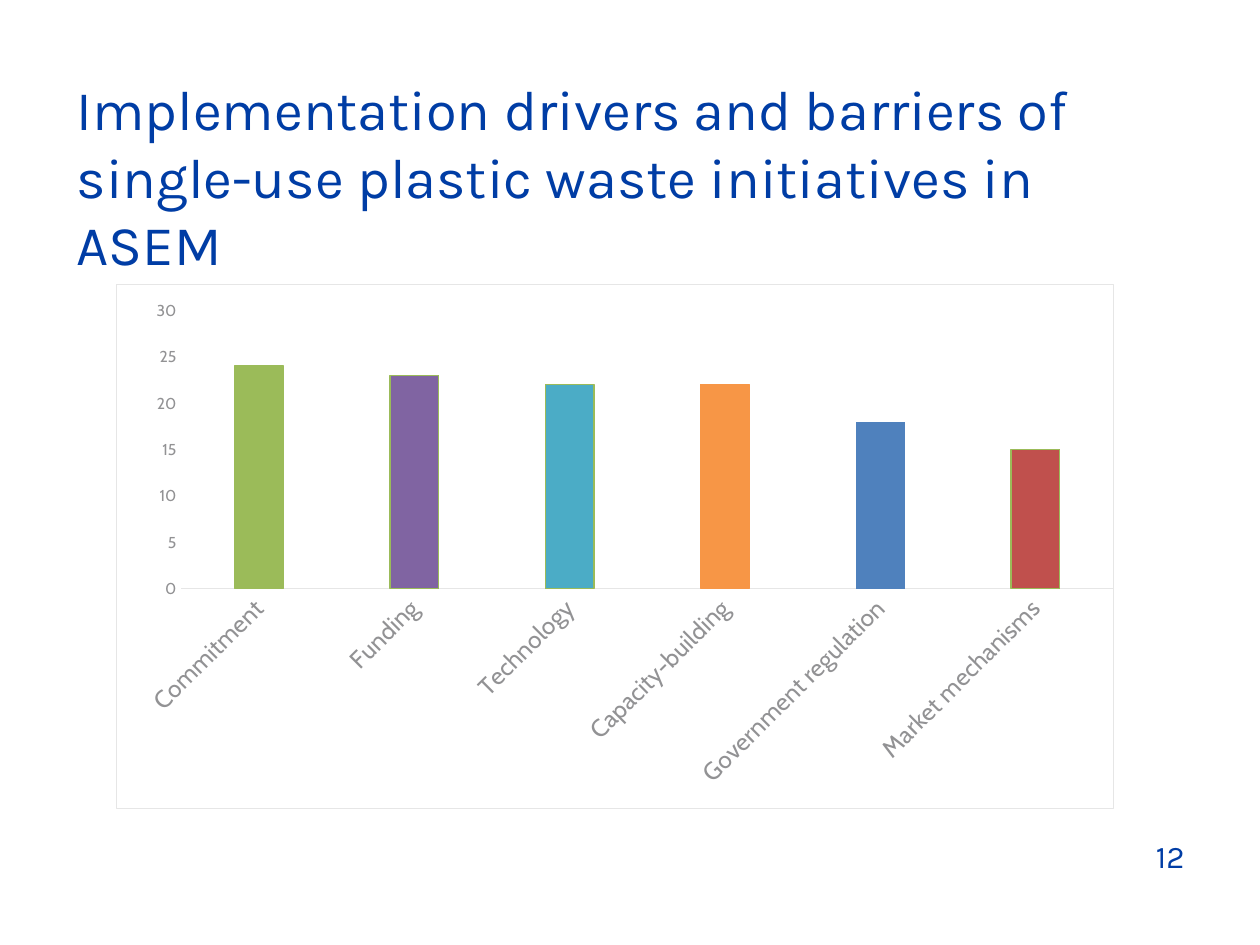
from lxml import etree
from pptx import Presentation
from pptx.chart.data import CategoryChartData
from pptx.dml.color import RGBColor
from pptx.enum.chart import XL_CHART_TYPE, XL_TICK_MARK
from pptx.enum.text import MSO_ANCHOR, PP_ALIGN
from pptx.oxml import parse_xml
from pptx.oxml.ns import nsdecls, qn
from pptx.util import Pt

COLUMN = XL_CHART_TYPE.COLUMN_CLUSTERED
NO_TICK = XL_TICK_MARK.NONE
MIDDLE, TOP = MSO_ANCHOR.MIDDLE, MSO_ANCHOR.TOP
LEFT, RIGHT = PP_ALIGN.LEFT, PP_ALIGN.RIGHT

COLORS = {
    "blue": "003DA5", "dark": "58585A", "gray": "929294", "rule": "E6E6E6",
    "green": "9BBB59", "purple": "8064A2", "teal": "4BACC6",
    "orange": "F79646", "azure": "4F81BD", "red": "C0504D",
}
DRIVERS = [
    ("Commitment", 24, "green", "green"),
    ("Funding", 23, "purple", "green"),
    ("Technology", 22, "teal", "green"),
    ("Capacity-building", 22, "orange", "orange"),
    ("Government regulation", 18, "azure", None),
    ("Market mechanisms", 15, "red", "green"),
]
PLOT = {"x": 0.065, "y": 0.05, "w": 0.935, "h": 0.531}


def assign(item, values):
    for key, value in values.items():
        setattr(item, key, value)


class Deck:
    def __init__(self, width, height):
        self.file = Presentation()
        assign(self.file, {"slide_width": Pt(width), "slide_height": Pt(height)})
        self.slide = self.file.slides.add_slide(self.file.slide_layouts[6])

    def font(self, font, face, size, color):
        assign(font, {"name": face, "size": Pt(size), "bold": False})
        font.color.rgb = RGBColor.from_string(COLORS[color])

    def line(self, line, color):
        if color is None:
            line.fill.background()
            return
        line.color.rgb = RGBColor.from_string(COLORS[color])
        line.width = Pt(0.75)

    def text(self, box, words, size, align=LEFT, anchor=TOP):
        frame = self.slide.shapes.add_textbox(*map(Pt, box)).text_frame
        assign(frame, {"word_wrap": True, "vertical_anchor": anchor})
        par = frame.paragraphs[0]
        assign(par, {"text": words, "alignment": align})
        for run in par.runs:
            self.font(run.font, "Karla", size, "blue")

    def axis(self, axis, size, line):
        assign(axis, {
            "major_tick_mark": NO_TICK, "minor_tick_mark": NO_TICK,
            "has_major_gridlines": False,
        })
        self.font(axis.tick_labels.font, "Cabin", size, "gray")
        self.line(axis.format.line, line)

    def place(self, chart):
        area = chart._chartSpace.chart.plotArea
        for old in area.findall(qn("c:layout")):
            area.remove(old)
        layout = etree.Element(qn("c:layout"))
        manual = etree.SubElement(layout, qn("c:manualLayout"))
        rules = {"layoutTarget": "inner", "xMode": "edge", "yMode": "edge", **PLOT}
        for tag, value in rules.items():
            etree.SubElement(manual, qn("c:" + tag)).set("val", str(value))
        area.insert(0, layout)

    def border(self, chart, color):
        chart._chartSpace.chart.addnext(parse_xml(
            f'<c:spPr {nsdecls("c", "a")}><a:noFill/><a:ln w="{Pt(0.75)}">'
            f'<a:solidFill><a:srgbClr val="{COLORS[color]}"/></a:solidFill>'
            '</a:ln></c:spPr>'))

    def columns(self, box, rows):
        data = CategoryChartData(number_format="0")
        data.categories = [row[0] for row in rows]
        data.add_series("Series 1", [row[1] for row in rows])
        chart = self.slide.shapes.add_chart(COLUMN, *map(Pt, box), data).chart
        assign(chart, {"has_legend": False, "has_title": False})
        self.font(chart.font, "Cabin", 10, "dark")
        plot = chart.plots[0]
        assign(plot, {"gap_width": 219, "overlap": -27, "vary_by_categories": False})
        self.axis(chart.category_axis, 14, "rule")
        self.axis(chart.value_axis, 9, None)
        assign(chart.value_axis, {
            "minimum_scale": 0, "maximum_scale": 30, "major_unit": 5,
        })
        turn = chart.category_axis._element.find(qn("c:txPr")).find(qn("a:bodyPr"))
        turn.set("rot", str(-45 * 60000))
        bars = plot.series[0]
        for spot, (_, _, fill, edge) in enumerate(rows):
            form = bars.points[spot].format
            form.fill.solid()
            form.fill.fore_color.rgb = RGBColor.from_string(COLORS[fill])
            self.line(form.line, edge)
        self.place(chart)
        self.border(chart, "rule")


def main():
    deck = Deck(720, 540)
    title = ("Implementation drivers and barriers of\v"
             "single-use plastic waste initiatives in ASEM")
    deck.text((36.72, 55.44, 646.56, 90), title, 32, anchor=MIDDLE)
    deck.text((516.24, 474.48, 167.76, 28.8), "12", 18, align=RIGHT)
    deck.columns((66.24, 162, 570.24, 300.24), DRIVERS)
    deck.file.save("out.pptx")


if __name__ == "__main__":
    main()
